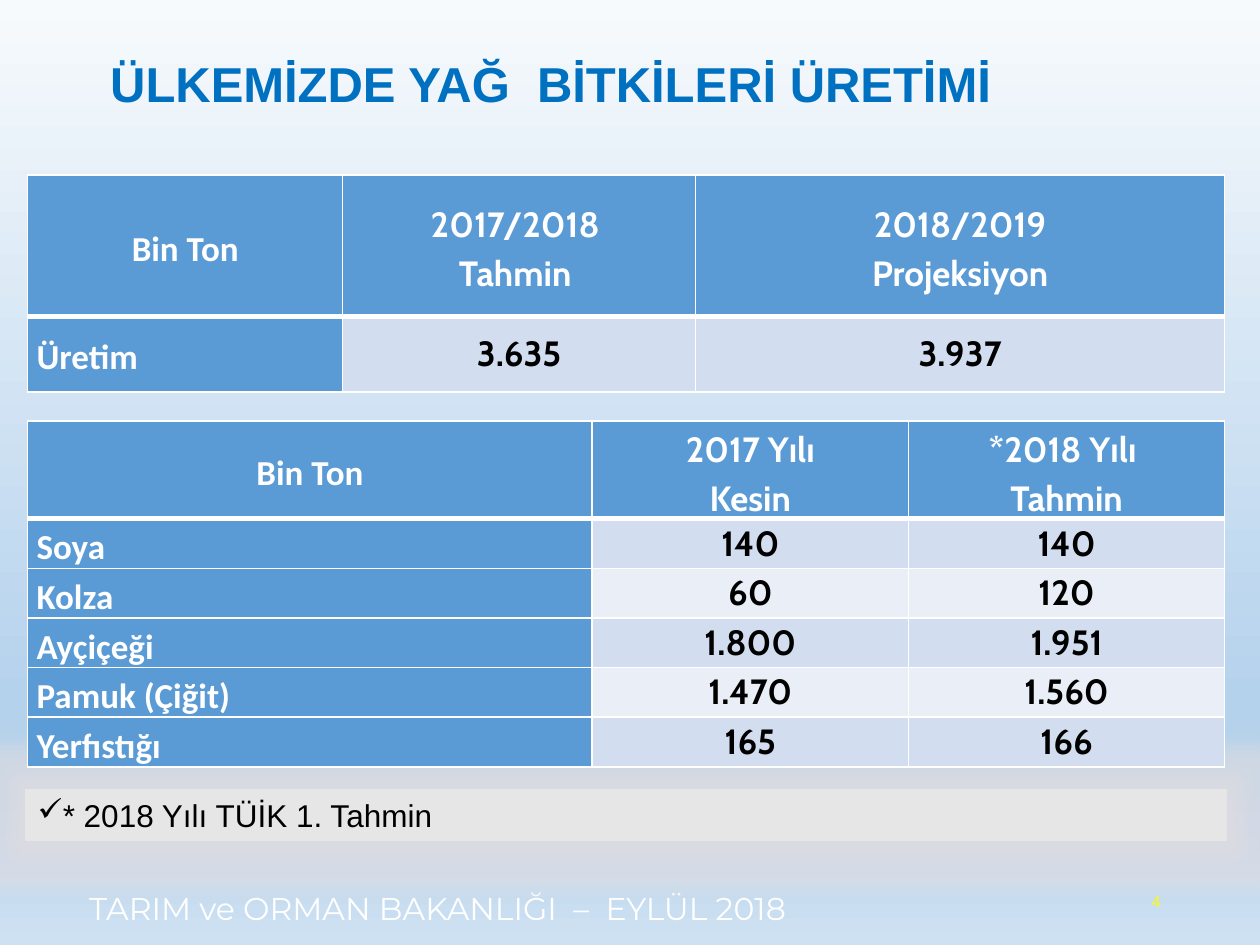
from dataclasses import dataclass
import pptx
import pptx.dml.color
import pptx.enum.shapes
import pptx.enum.text
import pptx.oxml
import pptx.util
from pptx.oxml.ns import nsdecls

RGB = pptx.dml.color.RGBColor
ALIGN = pptx.enum.text.PP_ALIGN
MIDDLE = pptx.enum.text.MSO_ANCHOR.MIDDLE
Inches = pptx.util.Inches
Pt = pptx.util.Pt

WHITE = RGB(0xFF, 0xFF, 0xFF)
BLACK = RGB(0, 0, 0)
YELLOW = RGB(0xFF, 0xFF, 0)
TITLE = RGB(0, 0x70, 0xC0)
HEAD = RGB(0x5B, 0x9B, 0xD5)
BANDS = RGB(0xD2, 0xDE, 0xEF), RGB(0xEA, 0xEF, 0xF7)
GREY = RGB(0xE7, 0xE6, 0xE6)
GLOW = RGB(0xE0, 0xDC, 0xE0)
SKY = [(0, "F7FAFD"), (74, "B5D2EC"), (83, "B5D2EC"), (100, "CEE1F2")]
LEFT, WIDE = 0.22, 9.5


@dataclass
class Grid:
    top: float
    shares: list[float]
    heights: list[float]
    rows: list[list[str]]


GRIDS = [
    Grid(1.39, [2.5, 2.8, 4.2], [1.12, 0.6], [
        ["Bin Ton", "2017/2018 \nTahmin ", "2018/2019\nProjeksiyon"],
        ["Üretim", "3.635", "3.937"],
    ]),
    Grid(3.34, [4.48, 2.51, 2.51], [0.59] + [0.39] * 5, [
        ["Bin Ton", "2017 Yılı\nKesin", "*2018 Yılı \nTahmin"],
        ["Soya", "140", "140"],
        ["Kolza", "60", "120"],
        ["Ayçiçeği", "1.800", "1.951"],
        ["Pamuk (Çiğit)", "1.470", "1.560"],
        ["Yerfıstığı", "165", "166"],
    ]),
]


def style(para, face: str, size: float, color: RGB, bold=False, align=None) -> None:
    font = para.font
    font.name, font.size, font.bold = face, Pt(size), bold
    font.color.rgb = color
    para.alignment = align


def edge(cell, base: float) -> None:
    """Draw white cell borders; base is the width of the bottom one."""
    props = cell._tc.get_or_add_tcPr()
    for side, width in zip("LRTB", (1, 1, 1, base)):
        props.append(pptx.oxml.parse_xml(
            f'<a:ln{side} {nsdecls("a")} w="{Pt(width)}"><a:solidFill>'
            f'<a:srgbClr val="{WHITE}"/></a:solidFill></a:ln{side}>'))


def fill_cell(cell, text: str, row: int, col: int) -> None:
    label = row == 0 or col == 0
    edge(cell, 3 if row == 0 else 1)
    cell.fill.solid()
    cell.fill.fore_color.rgb = HEAD if label else BANDS[(row - 1) % 2]
    cell.vertical_anchor = MIDDLE
    cell.margin_left = cell.margin_right = Inches(0.07 if label else 0.06)
    cell.margin_top = Inches(0.01)
    cell.margin_bottom = Inches(0 if label else 0.01)
    cell.text = text
    for para in cell.text_frame.paragraphs:
        style(para, "Cabin" if col else "Calibri", 20, WHITE if label else BLACK,
              True, ALIGN.LEFT if row and not col else ALIGN.CENTER)
        if label:
            para.line_spacing = 1.15


def draw_grid(slide, grid: Grid) -> None:
    frame = slide.shapes.add_table(
        len(grid.rows), len(grid.shares), Inches(LEFT), Inches(grid.top),
        Inches(WIDE), Inches(sum(grid.heights)))
    table = frame.table
    for col, share in zip(table.columns, grid.shares):
        col.width = Inches(WIDE * share / sum(grid.shares))
    for row, height in zip(table.rows, grid.heights):
        row.height = Inches(height)
    for r, texts in enumerate(grid.rows):
        for c, text in enumerate(texts):
            fill_cell(table.cell(r, c), text, r, c)


def add_text(slide, box: tuple, text: str, *look):
    frame = slide.shapes.add_textbox(*map(Inches, box)).text_frame
    frame.word_wrap = True
    frame.text = text
    style(frame.paragraphs[0], *look)
    return frame


def paint_sky(slide) -> None:
    fill = slide.background.fill
    fill.gradient()
    fill.gradient_angle = 270
    stops = fill._fill._gradFill.gsLst
    for stop in list(stops):
        stops.remove(stop)
    for place, color in SKY:
        stops.append(pptx.oxml.parse_xml(
            f'<a:gs {nsdecls("a")} pos="{place * 1000}"><a:srgbClr val="{color}"/></a:gs>'))


def add_note(slide) -> None:
    note = slide.shapes.add_shape(
        pptx.enum.shapes.MSO_SHAPE.RECTANGLE, *map(Inches, (0.2, 6.27, 9.53, 0.4)))
    note.fill.solid()
    note.fill.fore_color.rgb = note.line.color.rgb = GREY
    note.line.width = Pt(0.75)
    # Soft glow in place of the theme's shadow
    note.shadow.inherit = False
    note._element.spPr.find(pptx.oxml.ns.qn("a:effectLst")).append(pptx.oxml.parse_xml(
        f'<a:glow {nsdecls("a")} rad="{Pt(18)}"><a:srgbClr val="{GLOW}">'
        '<a:alpha val="60000"/></a:srgbClr></a:glow>'))
    frame = note.text_frame
    frame.word_wrap = True
    frame.vertical_anchor = pptx.enum.text.MSO_ANCHOR.TOP
    frame.text = "* 2018 Yılı TÜİK 1. Tahmin"
    para = frame.paragraphs[0]
    # Check mark bullet with a hanging indent
    props = para._p.get_or_add_pPr()
    props.set("marL", str(Inches(0.2)))
    props.set("indent", str(-Inches(0.2)))
    props.append(pptx.oxml.parse_xml(f'<a:buChar {nsdecls("a")} char="✓"/>'))
    style(para, "Arial", 18, BLACK, False, ALIGN.JUSTIFY)


def main() -> None:
    deck = pptx.Presentation()
    deck.slide_width, deck.slide_height = Inches(10), Inches(7.5)
    slide = deck.slides.add_slide(deck.slide_layouts[5])
    paint_sky(slide)

    # Footer and page number
    add_text(slide, (0.61, 7.01, 9.39, 0.4),
             "TARIM ve ORMAN BAKANLIĞI  –  EYLÜL 2018", "Montserrat", 18, WHITE)
    page = add_text(slide, (7.06, 6.95, 2.25, 0.4), "4", "Arial", 9, YELLOW,
                    False, ALIGN.RIGHT)
    page.vertical_anchor = MIDDLE

    # Title
    title = slide.shapes.title
    title.left, title.top, title.width, title.height = map(Inches, (0, 0.3, 8.74, 0.78))
    title.text_frame.text = "ÜLKEMİZDE YAĞ  BİTKİLERİ ÜRETİMİ"
    title.text_frame.vertical_anchor = MIDDLE
    head = title.text_frame.paragraphs[0]
    style(head, "Arial", 28, TITLE, True, ALIGN.CENTER)
    head.line_spacing = 0.9

    # Note and tables
    add_note(slide)
    for grid in GRIDS:
        draw_grid(slide, grid)
    deck.save("out.pptx")


if __name__ == "__main__":
    main()
